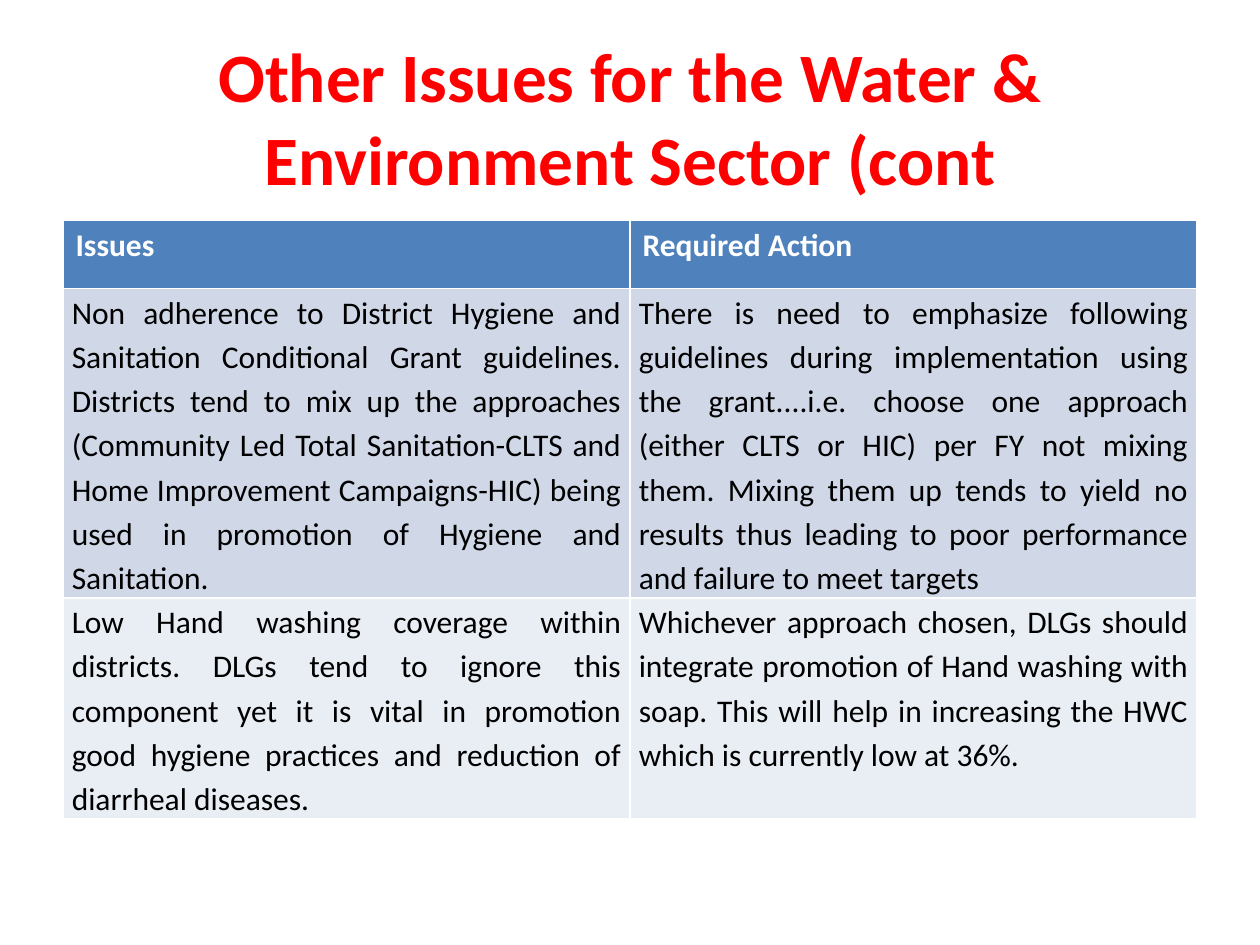
from pptx import Presentation
from pptx.dml.color import RGBColor
from pptx.enum.text import MSO_ANCHOR, PP_ALIGN
from pptx.util import Inches, Pt

CENTER, JUSTIFY = PP_ALIGN.CENTER, PP_ALIGN.JUSTIFY
MIDDLE = MSO_ANCHOR.MIDDLE
TITLE_ONLY = 5
FONT = "Calibri"

TITLE = "Other Issues for the Water & Environment Sector (cont"
HEADINGS = ("Issues", "Required Action")
ISSUES = [
    (
        "Non adherence to District Hygiene and Sanitation Conditional Grant "
        "guidelines. Districts tend to mix up the approaches (Community Led "
        "Total Sanitation-CLTS and Home Improvement Campaigns-HIC) being used "
        "in promotion of Hygiene and Sanitation.",
        "There is need to emphasize following guidelines during implementation "
        "using the grant....i.e. choose one approach (either CLTS or HIC) per "
        "FY not mixing them. Mixing them up tends to yield no results thus "
        "leading to poor performance and failure to meet targets",
    ),
    (
        "Low Hand washing coverage within districts. DLGs tend to ignore this "
        "component yet it is vital in promotion good hygiene practices and "
        "reduction of diarrheal diseases.",
        "Whichever approach chosen, DLGs should integrate promotion of Hand "
        "washing with soap. This will help in increasing the HWC which is "
        "currently low at 36%.",
    ),
]
ROW_HEIGHTS = (0.54, 2.44, 1.7)
ROW_FILLS = ("4F81BD", "D0D8E8", "E9EDF4")


def rgb(value):
    return RGBColor.from_string(value)


def style_font(paragraph, size, color, bold):
    font = paragraph.font
    font.name = FONT
    font.size = Pt(size)
    font.bold = bold
    font.color.rgb = rgb(color)


def add_title(slide):
    title = slide.shapes.title
    title.left, title.top = Inches(0.5), Inches(0.3)
    title.width, title.height = Inches(9), Inches(1.25)
    title.text_frame.text = TITLE
    title.text_frame.vertical_anchor = MIDDLE
    heading = title.text_frame.paragraphs[0]
    heading.alignment = CENTER
    style_font(heading, 39.6, "FF0000", True)


def fill_cell(cell, text, fill, is_header):
    cell.text = text
    cell.fill.solid()
    cell.fill.fore_color.rgb = rgb(fill)
    paragraph = cell.text_frame.paragraphs[0]
    style_font(paragraph, 18, "FFFFFF" if is_header else "000000", is_header)
    if not is_header:
        cell.margin_left = cell.margin_right = Inches(0.07)
        cell.margin_top = cell.margin_bottom = 0
        paragraph.alignment = JUSTIFY
        paragraph.line_spacing = 1.15


def add_issues_table(slide):
    rows = [HEADINGS, *ISSUES]
    table = slide.shapes.add_table(
        len(rows), len(HEADINGS), Inches(0.5), Inches(1.75),
        Inches(9), Inches(sum(ROW_HEIGHTS)),
    ).table
    for row_index, texts in enumerate(rows):
        table.rows[row_index].height = Inches(ROW_HEIGHTS[row_index])
        for column_index, text in enumerate(texts):
            fill_cell(table.cell(row_index, column_index), text,
                      ROW_FILLS[row_index], row_index == 0)


def main():
    presentation = Presentation()
    presentation.slide_width = Inches(10)
    presentation.slide_height = Inches(7.5)
    slide = presentation.slides.add_slide(presentation.slide_layouts[TITLE_ONLY])
    add_title(slide)
    add_issues_table(slide)
    presentation.save("out.pptx")


if __name__ == "__main__":
    main()
